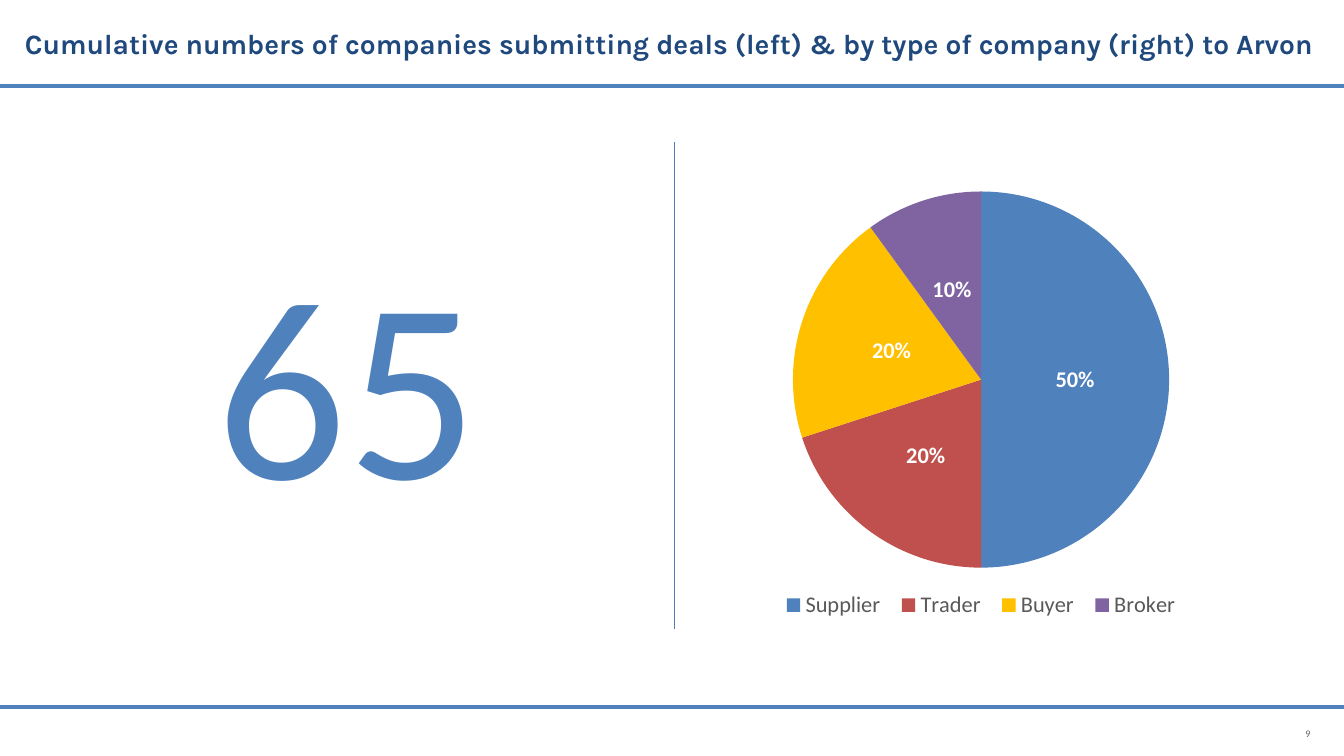
from dataclasses import dataclass

from lxml.etree import SubElement
from pptx import Presentation
from pptx.chart.data import CategoryChartData
from pptx.dml.color import RGBColor
from pptx.enum.chart import XL_CHART_TYPE as ChartType
from pptx.enum.chart import XL_LABEL_POSITION as LabelPosition
from pptx.enum.chart import XL_LEGEND_POSITION as LegendPosition
from pptx.enum.shapes import MSO_CONNECTOR as Connector
from pptx.enum.text import MSO_ANCHOR as Anchor
from pptx.enum.text import PP_ALIGN as Align
from pptx.oxml.ns import qn
from pptx.util import Inches, Pt


@dataclass(frozen=True)
class Theme:
    heading_font: str = "Karla"
    body_font: str = "Calibri"
    blue: str = "4F81BD"
    red: str = "C0504D"
    yellow: str = "FFC000"
    purple: str = "8064A2"
    navy: str = "1F497D"
    divider: str = "4B7EBC"
    gray: str = "595959"
    number_gray: str = "636463"
    white: str = "FFFFFF"
    title_size: float = 15
    figure_size: float = 138
    chart_size: float = 12
    number_size: float = 5.4


THEME = Theme()
COMPANY_TYPES = [
    ("Supplier", 50, THEME.blue),
    ("Trader", 20, THEME.red),
    ("Buyer", 20, THEME.yellow),
    ("Broker", 10, THEME.purple),
]


def style_font(font, size, color, name=THEME.body_font, bold=False):
    font.size = Pt(size)
    font.name = name
    font.bold = bold
    font.color.rgb = RGBColor.from_string(color)


def add_text(slide, text, left, top, width, height, *, align=Align.CENTER,
             anchor=Anchor.MIDDLE, **font_format):
    shape = slide.shapes.add_textbox(
        Inches(left), Inches(top), Inches(width), Inches(height))
    frame = shape.text_frame
    frame.word_wrap = True
    frame.vertical_anchor = anchor
    frame.margin_left = frame.margin_right = 0
    frame.margin_top = frame.margin_bottom = 0
    paragraph = frame.paragraphs[0]
    paragraph.alignment = align
    run = paragraph.add_run()
    run.text = text
    style_font(run.font, **font_format)


def add_line(slide, start, end, color, width):
    line = slide.shapes.add_connector(
        Connector.STRAIGHT, *(Inches(value) for value in (*start, *end)))
    line.line.color.rgb = RGBColor.from_string(color)
    line.line.width = Pt(width)
    SubElement(line._element.spPr, qn("a:effectLst"))


def set_layout(element, position, **settings):
    layout = element.find(qn("c:layout"))
    if layout is None:
        layout = SubElement(element, qn("c:layout"))
        place = 1 if element.tag == qn("c:legend") else 0
        element.insert(place, layout)
    manual = SubElement(layout, qn("c:manualLayout"))
    settings.update(xMode="edge", yMode="edge", **dict(zip("xywh", position)))
    for tag, value in settings.items():
        SubElement(manual, qn(f"c:{tag}")).set("val", str(value))


def add_company_pie(slide, left, top, width, height):
    names, shares, colors = zip(*COMPANY_TYPES)
    data = CategoryChartData()
    data.categories = names
    data.add_series("Series 1", shares)
    chart = slide.shapes.add_chart(
        ChartType.PIE, Inches(left), Inches(top), Inches(width),
        Inches(height), data).chart
    chart.has_title = False
    style_font(chart.font, THEME.chart_size, THEME.gray)
    chart.has_legend = True
    chart.legend.position = LegendPosition.BOTTOM
    chart.legend.include_in_layout = False
    style_font(chart.legend.font, THEME.chart_size, THEME.gray)

    plot = chart.plots[0]
    plot.vary_by_categories = True
    for index, color in enumerate(colors):
        fill = plot.series[0].points[index].format.fill
        fill.solid()
        fill.fore_color.rgb = RGBColor.from_string(color)
    plot.has_data_labels = True
    labels = plot.data_labels
    labels.show_percentage = True
    labels.show_value = False
    labels.number_format = "0%"
    labels.number_format_is_linked = False
    labels.position = LabelPosition.CENTER
    style_font(labels.font, THEME.chart_size, THEME.white, bold=True)

    chart_element = chart._chartSpace.chart
    set_layout(chart_element.plotArea, (0.18, 0.03, 0.56, 0.81),
               layoutTarget="inner")
    set_layout(chart_element.find(qn("c:legend")), (0.15, 0.87, 0.62, 0.1))


def main():
    presentation = Presentation()
    presentation.slide_width = Inches(10)
    presentation.slide_height = Inches(10) * 9 // 16
    slide = presentation.slides.add_slide(presentation.slide_layouts[6])

    for rule_top in (0.64, 5.26):
        add_line(slide, (0, rule_top), (10, rule_top), THEME.blue, 2.25)
    add_text(
        slide,
        "Cumulative numbers of companies submitting deals (left) "
        "& by type of company (right) to Arvon",
        0, 0.14, 9.96, 0.37, size=THEME.title_size, color=THEME.navy,
        name=THEME.heading_font, bold=True)
    add_text(slide, "9", 9.35, 5.34, 0.4, 0.24, align=Align.RIGHT,
             size=THEME.number_size, color=THEME.number_gray)
    add_company_pie(slide, 5, 1.32, 5, 3.46)
    add_line(slide, (5.02, 1.06), (5.02, 4.68), THEME.divider, 0.75)
    add_text(slide, "65", 0.92, 1.65, 3.33, 2.83, anchor=Anchor.TOP,
             size=THEME.figure_size, color=THEME.blue)

    presentation.save("out.pptx")


if __name__ == "__main__":
    main()
